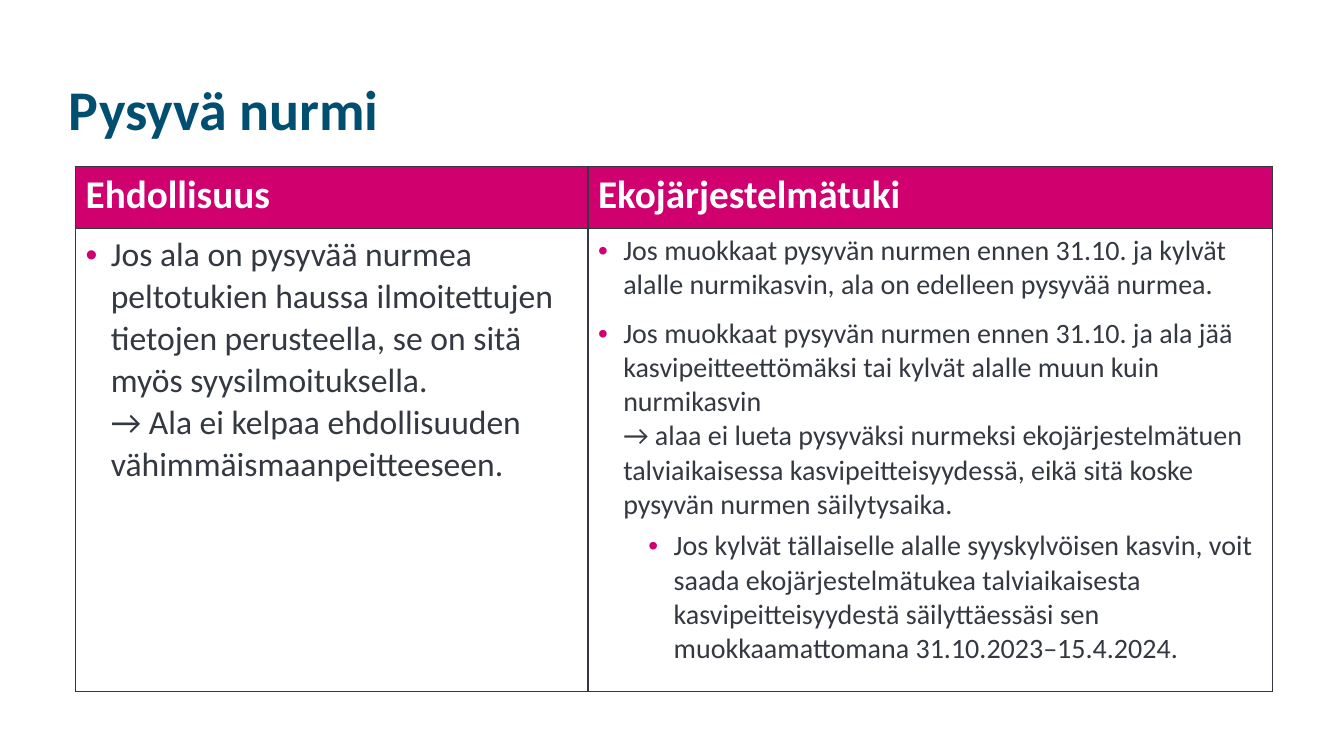
from lxml.etree import SubElement
from pptx import Presentation
from pptx.dml.color import RGBColor
from pptx.enum.text import MSO_ANCHOR as Anchor, PP_ALIGN as Align
from pptx.oxml import parse_xml
from pptx.oxml.ns import nsdecls, qn
from pptx.util import Inches, Pt

WIDTH, HEIGHT = Inches(13.333), Inches(7.5)
COLUMN, ROW = WIDTH / 160, HEIGHT / 150
FONT = "Calibri"
TEAL = RGBColor(0x00, 0x4F, 0x71)
PINK = RGBColor(0xD0, 0x00, 0x6F)
INK = RGBColor(0x34, 0x38, 0x41)
WHITE = RGBColor(0xFF, 0xFF, 0xFF)

TITLE = "Pysyvä nurmi"
HEADERS = ["Ehdollisuus", "Ekojärjestelmätuki"]
CONDITIONALITY = (
    "Jos ala on pysyvää nurmea peltotukien haussa ilmoitettujen tietojen "
    "perusteella, se on sitä myös syysilmoituksella.\n"
    "→ Ala ei kelpaa ehdollisuuden vähimmäismaanpeitteeseen."
)
ECO_SCHEME = [
    ("Jos muokkaat pysyvän nurmen ennen 31.10. ja kylvät alalle nurmikasvin, "
     "ala on edelleen pysyvää nurmea.", 0),
    ("Jos muokkaat pysyvän nurmen ennen 31.10. ja ala jää kasvipeitteettömäksi "
     "tai kylvät alalle muun kuin nurmikasvin\n"
     "→ alaa ei lueta pysyväksi nurmeksi ekojärjestelmätuen talviaikaisessa "
     "kasvipeitteisyydessä, eikä sitä koske pysyvän nurmen säilytysaika.", 0),
    ("Jos kylvät tällaiselle alalle syyskylvöisen kasvin, voit saada "
     "ekojärjestelmätukea talviaikaisesta kasvipeitteisyydestä säilyttäessäsi "
     "sen muokkaamattomana 31.10.2023–15.4.2024.", 1),
]


def across(count):
    return round(count * COLUMN)


def down(count):
    return round(count * ROW)


def add_bullet(paragraph, level):
    properties = paragraph._p.get_or_add_pPr()
    properties.set("marL", str(Inches(0.25 + 0.5 * level)))
    properties.set("indent", str(-Inches(0.25)))
    color = SubElement(properties, qn("a:buClr"))
    SubElement(color, qn("a:srgbClr")).set("val", str(PINK))
    SubElement(properties, qn("a:buFont")).set("typeface", "Arial")
    SubElement(properties, qn("a:buChar")).set("char", "•")


def write(frame, text, size, color, bold=False, level=None, spacing=None,
          before=0, after=0, first=True):
    paragraph = frame.paragraphs[0] if first else frame.add_paragraph()
    paragraph.text = text
    paragraph.alignment = Align.LEFT
    if level is not None:
        paragraph.level = level
        add_bullet(paragraph, level)
    if spacing:
        paragraph.line_spacing = Pt(spacing)
    paragraph.space_before = Pt(before)
    paragraph.space_after = Pt(after)
    for run in paragraph.runs:
        run.font.name = FONT
        run.font.size = Pt(size)
        run.font.bold = bold
        run.font.color.rgb = color


def format_cell(cell, fill):
    if fill is None:
        cell.fill.background()
    else:
        cell.fill.solid()
        cell.fill.fore_color.rgb = fill
    properties = cell._tc.get_or_add_tcPr()
    for index, side in enumerate(["lnL", "lnR", "lnT", "lnB"]):
        border = parse_xml(
            f'<a:{side} {nsdecls("a")} w="{Pt(1)}"><a:solidFill>'
            f'<a:srgbClr val="{INK}"/></a:solidFill></a:{side}>'
        )
        properties.insert(index, border)


def add_title(slide):
    title = slide.shapes.title
    title.left, title.top = across(7), down(8)
    title.width, title.height = across(128), down(29)
    title.text_frame.vertical_anchor = Anchor.MIDDLE
    write(title.text_frame, TITLE, size=40, color=TEAL, bold=True, spacing=40)


def add_comparison(slide):
    widths = [across(61), across(81.5)]
    heights = [down(12.4), down(91.8)]
    table = slide.shapes.add_table(
        2, 2, across(9), down(33), sum(widths), sum(heights)).table
    for column, width in zip(table.columns, widths):
        column.width = width
    for row, height, fill in zip(table.rows, heights, [PINK, None]):
        row.height = height
        for cell in row.cells:
            format_cell(cell, fill)
    for cell, header in zip(table.rows[0].cells, HEADERS):
        write(cell.text_frame, header, size=28, color=WHITE, bold=True)
    write(table.cell(1, 0).text_frame, CONDITIONALITY, size=24, color=INK,
          level=0, spacing=30, after=6)
    for index, (text, level) in enumerate(ECO_SCHEME):
        write(table.cell(1, 1).text_frame, text, size=20, color=INK,
              level=level, before=10 / (level + 1) if index else 0,
              first=index == 0)


def main():
    presentation = Presentation()
    presentation.slide_width, presentation.slide_height = WIDTH, HEIGHT
    slide = presentation.slides.add_slide(presentation.slide_layouts[5])
    add_title(slide)
    add_comparison(slide)
    presentation.save("out.pptx")


if __name__ == "__main__":
    main()
